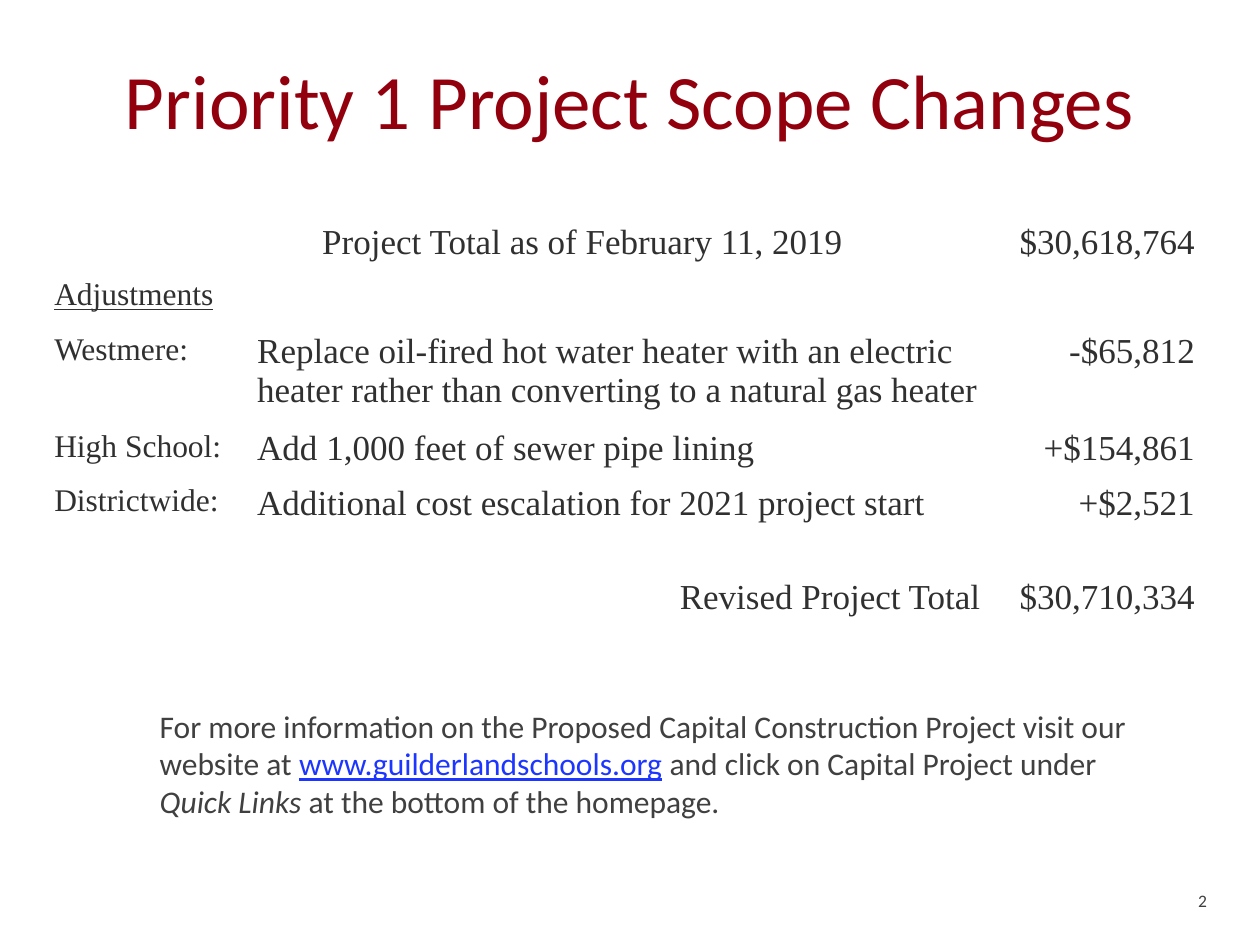
"""Build the slide of Priority 1 project scope changes."""
from pptx import Presentation
from pptx.dml.color import RGBColor
from pptx.enum import text
from pptx.util import Cm, Pt

COLORS = {"title": "92000E", "table": "303030", "body": "404040",
          "link": "1D36FF", "background": "FFFFFF"}
SANS, SERIF = "Calibri", "Times New Roman"
LEFT, CENTER, RIGHT = text.PP_ALIGN.LEFT, text.PP_ALIGN.CENTER, text.PP_ALIGN.RIGHT

TITLE = "Priority 1 Project Scope Changes"
ROWS = [
    ("Project Total as of February 11, 2019", "", "$30,618,764"),
    ("Adjustments", "", ""),
    ("Westmere:", "Replace oil-fired hot water heater with an electric heater "
     "rather than converting to a natural gas heater", "-$65,812"),
    ("High School:", "Add 1,000 feet of sewer pipe lining", "+$154,861"),
    ("Districtwide:", "Additional cost escalation for 2021 project start", "+$2,521"),
    ("", "Revised Project Total", "$30,710,334"),
]
COLUMN_WIDTHS = [4.09, 15.09, 4.32]
COLUMN_STYLES = [(18, LEFT), (20, LEFT), (20, RIGHT)]
ROW_HEIGHT, TALL_HEIGHT = 1.03, 1.83
TALL_ROWS = (2, 5)
NOTE = [
    ("For more information on the Proposed Capital Construction Project "
     "visit our website at ", "body", {}),
    ("www.guilderlandschools.org", "link", {"underline": True}),
    (" and click on Capital Project under ", "body", {}),
    ("Quick Links ", "body", {"italic": True}),
    ("at the bottom of the homepage.", "body", {}),
]


def style_font(font, name, size, color):
    font.name, font.size = name, Pt(size)
    font.color.rgb = RGBColor.from_string(COLORS[color])


def place(shape, left, top, width, height):
    shape.left, shape.top, shape.width, shape.height = map(Cm, (left, top, width, height))


def clear_margins(frame):
    frame.margin_left = frame.margin_top = frame.margin_right = frame.margin_bottom = 0


def add_title(slide):
    title = slide.shapes.title
    place(title, 1.27, 1.27, 22.86, 3.18)
    frame = title.text_frame
    frame.text = TITLE
    clear_margins(frame)
    frame.vertical_anchor = text.MSO_ANCHOR.TOP
    paragraph = frame.paragraphs[0]
    paragraph.alignment, paragraph.line_spacing = CENTER, 0.9
    style_font(paragraph.runs[0].font, SANS, 44, "title")


def add_costs(slide):
    heights = [TALL_HEIGHT if row in TALL_ROWS else ROW_HEIGHT for row in range(len(ROWS))]
    table = slide.shapes.add_table(
        len(ROWS), len(COLUMN_WIDTHS), Cm(0.84), Cm(4.37),
        Cm(sum(COLUMN_WIDTHS)), Cm(sum(heights))).table
    table.first_row = table.horz_banding = False
    for column, width in zip(table.columns, COLUMN_WIDTHS):
        column.width = Cm(width)
    for row, height in zip(table.rows, heights):
        row.height = Cm(height)
    for row, values in enumerate(ROWS):
        for column, (value, (size, alignment)) in enumerate(zip(values, COLUMN_STYLES)):
            cell = table.cell(row, column)
            cell.fill.solid()
            cell.fill.fore_color.rgb = RGBColor.from_string(COLORS["background"])
            cell.text_frame.text = value
            paragraph = cell.text_frame.paragraphs[0]
            paragraph.alignment = alignment
            style_font(paragraph.font, SERIF, size, "table")
            for run in paragraph.runs:
                style_font(run.font, SERIF, size, "table")

    heading = table.cell(0, 0)
    heading.merge(table.cell(0, 1))
    heading.margin_left = Cm(2.88)
    heading.text_frame.paragraphs[0].alignment = CENTER
    heading.text_frame.paragraphs[0].runs[0].font.size = Pt(20)
    table.cell(1, 0).text_frame.paragraphs[0].runs[0].font.underline = True
    last = len(ROWS) - 1
    table.cell(last, 1).text_frame.paragraphs[0].alignment = RIGHT
    for column in (1, 2):
        table.cell(last, column).vertical_anchor = text.MSO_ANCHOR.BOTTOM


def add_note(slide):
    frame = slide.shapes.add_textbox(Cm(2.97), Cm(14.12), Cm(20.12), Cm(2.57)).text_frame
    frame.word_wrap = True
    for words, color, emphasis in NOTE:
        run = frame.paragraphs[0].add_run()
        run.text = words
        style_font(run.font, SANS, 18, color)
        for name, value in emphasis.items():
            setattr(run.font, name, value)


def add_page_number(slide):
    frame = slide.shapes.add_textbox(Cm(23.06), Cm(17.35), Cm(1.27), Cm(1.02)).text_frame
    frame.word_wrap = True
    clear_margins(frame)
    frame.vertical_anchor = text.MSO_ANCHOR.BOTTOM
    frame.text = "2"
    paragraph = frame.paragraphs[0]
    paragraph.alignment = RIGHT
    style_font(paragraph.runs[0].font, SANS, 10, "body")


def main():
    presentation = Presentation()
    presentation.slide_width, presentation.slide_height = Cm(25.4), Cm(19.05)
    slide = presentation.slides.add_slide(presentation.slide_layouts[5])
    add_title(slide)
    add_page_number(slide)
    add_costs(slide)
    add_note(slide)
    presentation.save("out.pptx")


if __name__ == "__main__":
    main()
